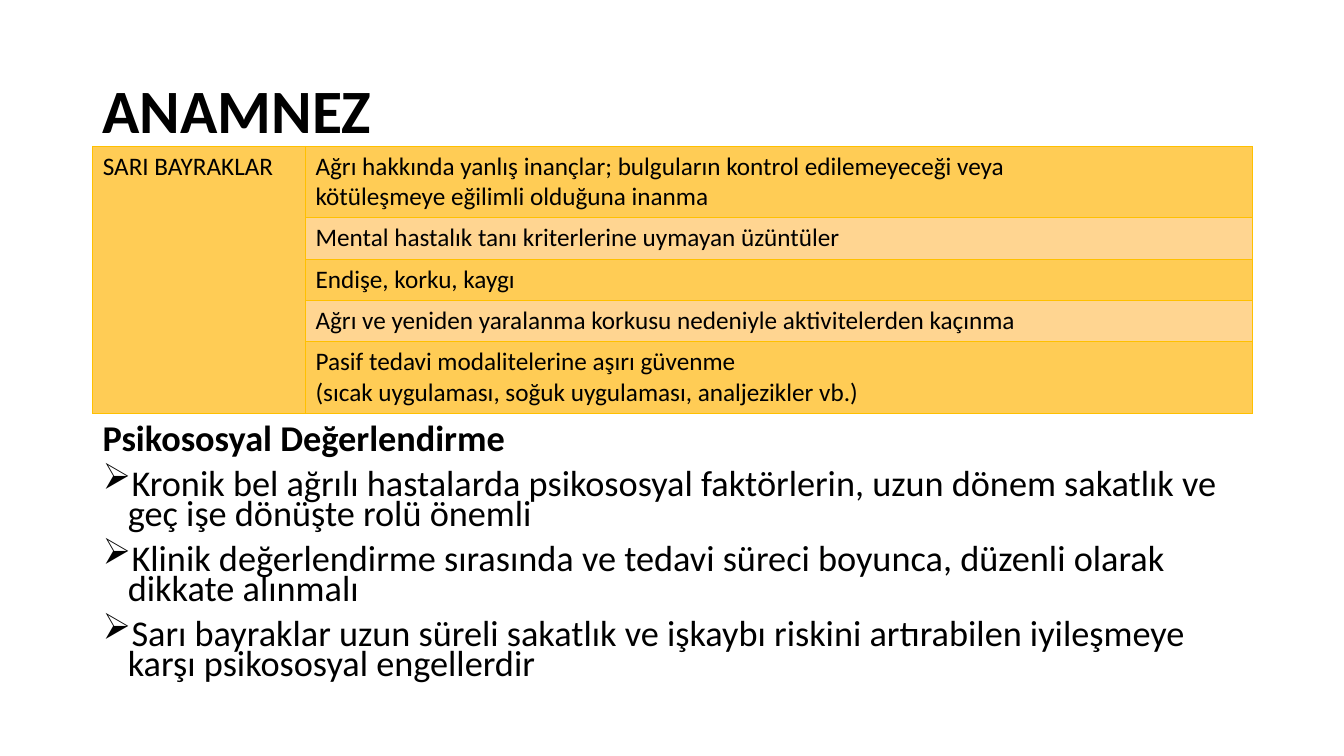
"""Build the ANAMNEZ slide with its yellow flag table and bullets."""
import pptx
import pptx.dml.color
import pptx.enum.text
import pptx.oxml
import pptx.oxml.ns
import pptx.util
from lxml import etree

TITLE = "ANAMNEZ"
LABEL = "SARI BAYRAKLAR"
FLAGS = [
    "Ağrı hakkında yanlış inançlar; bulguların kontrol edilemeyeceği veya\vkötüleşmeye eğilimli olduğuna inanma",
    "Mental hastalık tanı kriterlerine uymayan üzüntüler",
    "Endişe, korku, kaygı",
    "Ağrı ve yeniden yaralanma korkusu nedeniyle aktivitelerden kaçınma",
    "Pasif tedavi modalitelerine aşırı güvenme\v(sıcak uygulaması, soğuk uygulaması, analjezikler vb.)",
]
HEAD = "Psikososyal Değerlendirme"
POINTS = [
    "Kronik bel ağrılı hastalarda psikososyal faktörlerin, uzun dönem sakatlık ve geç işe dönüşte rolü önemli",
    "Klinik değerlendirme sırasında ve tedavi süreci boyunca, düzenli olarak dikkate alınmalı",
    "Sarı bayraklar uzun süreli sakatlık ve işkaybı riskini artırabilen iyileşmeye karşı psikososyal engellerdir",
]

RGB = pptx.dml.color.RGBColor
BLACK = RGB(0, 0, 0)
GOLD = RGB(0xFF, 0xCC, 0x55)
PALE = RGB(0xFF, 0xD5, 0x91)
EDGE = RGB(0xFF, 0xC0, 0x00)
FONT = "Calibri"
LEFT, WIDE = 0.92, 11.5
COLS = (2.11, 9.39)
LINE, PAD = 0.3, 0.11

inch = pptx.util.Inches
qn = pptx.oxml.ns.qn


def style(par, size, bold=False):
    font = par.font
    font.name, font.size, font.bold = FONT, pptx.util.Pt(size), bold
    font.color.rgb = BLACK


def add_box(slide, top, high):
    box = slide.shapes.add_textbox(inch(LEFT), inch(top), inch(WIDE), inch(high))
    box.text_frame.word_wrap = True
    return box.text_frame


def add_edges(cell):
    props = cell._tc.get_or_add_tcPr()
    for spot, side in enumerate(("lnL", "lnR", "lnT", "lnB")):
        line = etree.Element(qn(f"a:{side}"), w=str(pptx.util.Pt(0.5)))
        fill = etree.SubElement(line, qn("a:solidFill"))
        etree.SubElement(fill, qn("a:srgbClr"), val=str(EDGE))
        props.insert(spot, line)


def add_table(slide):
    highs = [LINE * (flag.count("\v") + 1) + PAD for flag in FLAGS]
    frame = slide.shapes.add_table(
        len(FLAGS), len(COLS), inch(LEFT), inch(1.45), inch(WIDE), inch(sum(highs)))
    table = frame.table
    for col, wide in zip(table.columns, COLS):
        col.width = inch(wide)
    for row, high in zip(table.rows, highs):
        row.height = inch(high)
    table.cell(0, 0).merge(table.cell(len(FLAGS) - 1, 0))
    table.cell(0, 0).text = LABEL
    for num, flag in enumerate(FLAGS):
        table.cell(num, 1).text = flag
        for col in range(len(COLS)):
            cell = table.cell(num, col)
            cell.fill.solid()
            cell.fill.fore_color.rgb = PALE if col and num % 2 else GOLD
            add_edges(cell)
            style(cell.text_frame.paragraphs[0], 18)


def add_bullet(par):
    props = par._p.get_or_add_pPr()
    props.set("marL", str(inch(0.25)))
    props.set("indent", str(-inch(0.25)))
    mark = etree.Element(qn("a:buChar"), char="➢")
    props.find(qn("a:defRPr")).addprevious(mark)


def main():
    deck = pptx.Presentation()
    deck.slide_width, deck.slide_height = inch(13.33), inch(7.5)
    slide = deck.slides.add_slide(deck.slide_layouts[6])

    title = add_box(slide, 0.4, 1.45)
    title.vertical_anchor = pptx.enum.text.MSO_ANCHOR.MIDDLE
    title.text = TITLE
    title.paragraphs[0].line_spacing = 0.9
    style(title.paragraphs[0], 44, True)

    add_table(slide)

    body = add_box(slide, 4.19, 2.78)
    body.text = "\n".join([HEAD, *POINTS])
    for num, par in enumerate(body.paragraphs):
        par.line_spacing = 0.7
        par.space_before = pptx.util.Pt(10)
        style(par, 25.9, num == 0)
        if num:
            add_bullet(par)

    deck.save("out.pptx")


if __name__ == "__main__":
    main()
